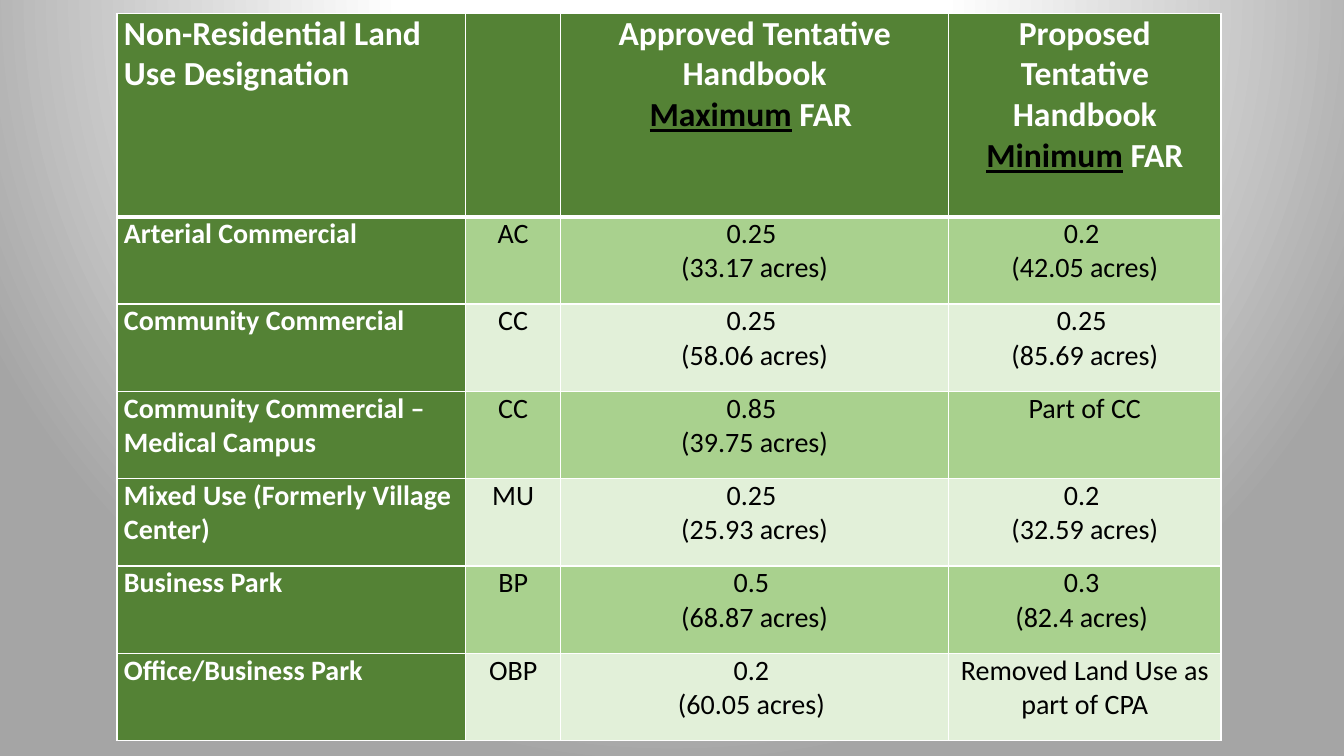
import pptx
import pptx.dml.color
import pptx.enum.text
import pptx.oxml
import pptx.oxml.ns
import pptx.util

Inches = pptx.util.Inches
qn = pptx.oxml.ns.qn
NS = pptx.oxml.ns.nsdecls("a")

WHITE, BLACK = "FFFFFF", "000000"
DARK, MID, PALE = "548235", "A9D18E", "E2F0D9"
COL_WIDTHS = [3.46, 0.94, 3.85, 2.7]
HEADER_HEIGHT = 2.02

# Each header cell is a list of paragraphs, each a list of (text, underlined)
HEADER = [
    [[("Non-Residential Land Use Designation", False)]],
    [],
    [[("Approved Tentative Handbook", False)],
     [("Maximum", True), (" FAR ", False)]],
    [[("Proposed Tentative Handbook ", False), ("Minimum", True), (" FAR", False)]],
]
LAND_USES = [
    ["Arterial Commercial", "AC", "0.25 \n(33.17 acres)", "0.2 \n(42.05 acres)"],
    ["Community Commercial", "CC", "0.25 \n(58.06 acres)", "0.25 \n(85.69 acres)"],
    ["Community Commercial – Medical Campus", "CC", "0.85 \n(39.75 acres)", "Part of CC"],
    ["Mixed Use (Formerly Village Center)", "MU", "0.25 \n(25.93 acres)", "0.2 \n(32.59 acres)"],
    ["Business Park", "BP", "0.5 \n(68.87 acres)", "0.3 \n(82.4 acres) "],
    ["Office/Business Park", "OBP", "0.2 \n(60.05 acres) ", "Removed Land Use as part of CPA"],
]


def rgb(value):
    return pptx.dml.color.RGBColor.from_string(value)


def add_run(p, text, size=20, color=BLACK, bold=False, underline=False):
    r = p.add_run()
    r.text = text
    r.font.name = "Calibri"
    r.font.size = pptx.util.Pt(size)
    r.font.color.rgb = rgb(color)
    r.font.bold = bold
    r.font.underline = underline


def set_background(s):
    s.background.fill.gradient()
    grad = s._element.find(".//" + qn("a:gradFill"))
    stops = "".join(
        f'<a:gs pos="{pos * 1000}"><a:srgbClr val="{color}"/></a:gs>'
        for pos, color in [(0, WHITE), (35, WHITE), (100, "A5A5A5")])
    grad.getparent().replace(grad, pptx.oxml.parse_xml(
        f'<a:gradFill {NS} rotWithShape="1"><a:gsLst>{stops}</a:gsLst>'
        '<a:path path="circle"><a:fillToRect l="50000" t="-80000" r="50000" b="180000"/>'
        '</a:path></a:gradFill>'))


def format_cell(cell, fill, top=1, bottom=1):
    cell.margin_left = cell.margin_right = Inches(0.07)
    cell.margin_top = cell.margin_bottom = 0
    tcPr = cell._tc.get_or_add_tcPr()
    for side, width in zip("LRTB", (1, 1, top, bottom)):
        tcPr.append(pptx.oxml.parse_xml(
            f'<a:ln{side} {NS} w="{pptx.util.Pt(width)}"><a:solidFill>'
            f'<a:srgbClr val="{WHITE}"/></a:solidFill></a:ln{side}>'))
    cell.fill.solid()
    cell.fill.fore_color.rgb = rgb(fill)


def fill_text(cell, paragraphs, centered, color, **fmt):
    tf = cell.text_frame
    for i, runs in enumerate(paragraphs):
        p = tf.add_paragraph() if i else tf.paragraphs[0]
        if centered:
            p.alignment = pptx.enum.text.PP_ALIGN.CENTER
        for text, underlined in runs:
            add_run(p, text, color=BLACK if underlined else color,
                    underline=underlined, **fmt)


def add_far_table(s, left, top, width, height):
    table = s.shapes.add_table(
        len(LAND_USES) + 1, len(COL_WIDTHS),
        Inches(left), Inches(top), Inches(width), Inches(height)).table
    for col, col_width in zip(table.columns, COL_WIDTHS):
        col.width = Inches(col_width)
    for row in table.rows:
        row.height = Inches((height - HEADER_HEIGHT) / len(LAND_USES))
    table.rows[0].height = Inches(HEADER_HEIGHT)

    # Header row
    for c, paragraphs in enumerate(HEADER):
        cell = table.cell(0, c)
        format_cell(cell, DARK, bottom=3)
        fill_text(cell, paragraphs, c > 0, WHITE, size=24, bold=True)

    # Land use rows, banded to the right of the name column
    for i, values in enumerate(LAND_USES, 1):
        for c, value in enumerate(values):
            cell = table.cell(i, c)
            is_name = c == 0
            band = MID if i % 2 else PALE
            format_cell(cell, DARK if is_name else band, top=3 if i == 1 else 1)
            fill_text(cell, [[(line, False)] for line in value.split("\n")],
                      not is_name, WHITE if is_name else BLACK, bold=is_name)


def main():
    prs = pptx.Presentation()
    prs.slide_width, prs.slide_height = Inches(13.33), Inches(7.5)
    s = prs.slides.add_slide(prs.slide_layouts[6])
    set_background(s)
    add_far_table(s, 1.16, 0.13, 10.95, 7.22)
    prs.save("out.pptx")


if __name__ == "__main__":
    main()
